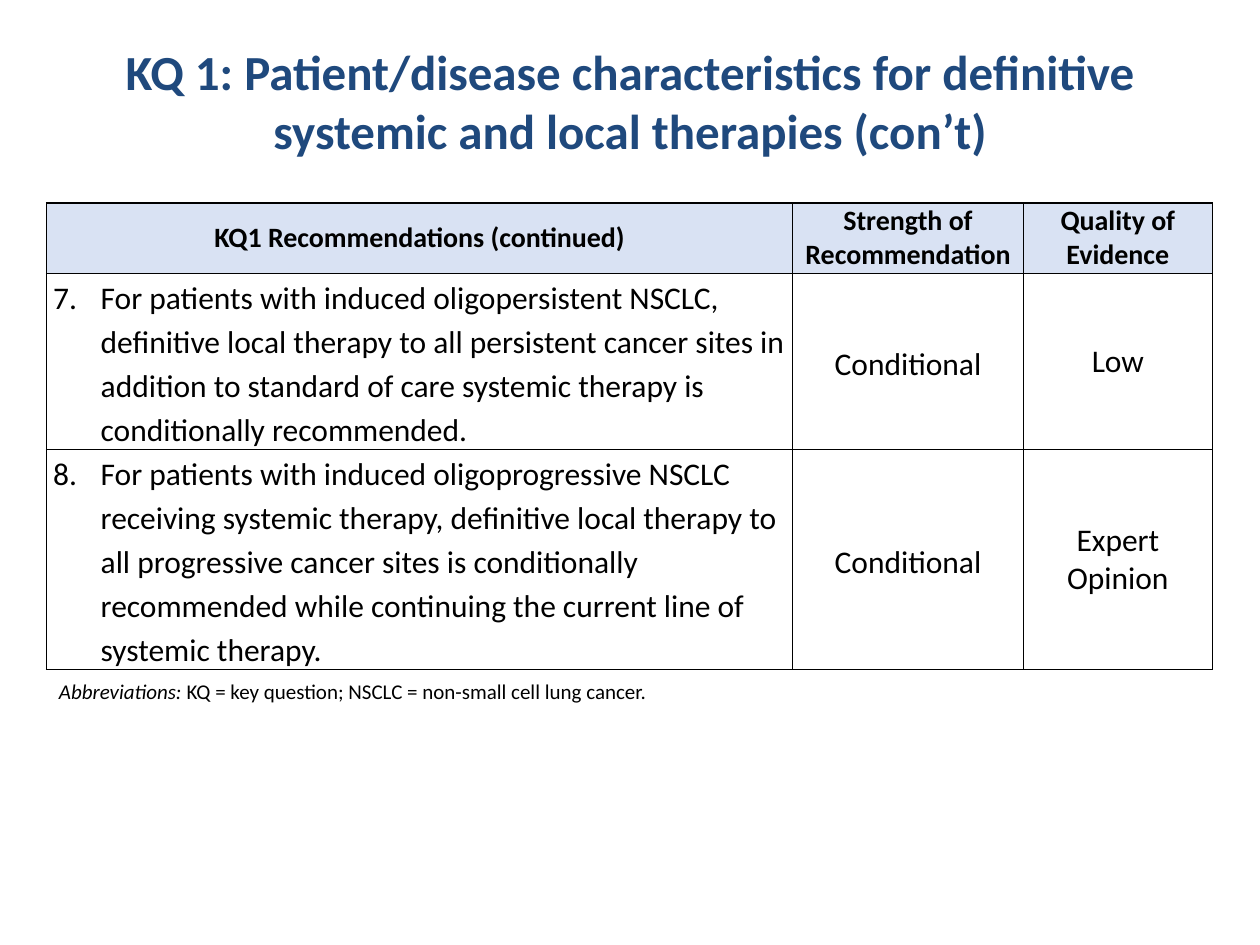
from dataclasses import dataclass

from lxml import etree
from pptx import Presentation
from pptx.dml.color import RGBColor
from pptx.enum.text import MSO_ANCHOR, PP_ALIGN
from pptx.oxml.ns import qn
from pptx.slide import Slide
from pptx.util import Cm, Pt

LEFT, CENTER = PP_ALIGN.LEFT, PP_ALIGN.CENTER
TOP, MIDDLE = MSO_ANCHOR.TOP, MSO_ANCHOR.MIDDLE
COLORS = {"title": "1F497D", "text": "000000", "border": "000000", "header": "D9E2F3"}
HEADERS = ["KQ1 Recommendations (continued)", "Strength of Recommendation", "Quality of Evidence"]
RECOMMENDATIONS = [
    ("For patients with induced oligopersistent NSCLC, definitive local therapy to all "
     "persistent cancer sites in addition to standard of care systemic therapy is "
     "conditionally recommended.", "Conditional", "Low"),
    ("For patients with induced oligoprogressive NSCLC receiving systemic therapy, definitive "
     "local therapy to all progressive cancer sites is conditionally recommended while "
     "continuing the current line of systemic therapy.", "Conditional", "Expert Opinion"),
]
FIRST_NUMBER = 7
COLUMN_WIDTHS = [15.04, 4.65, 3.81]
ROW_HEIGHTS = [1.42, 3.55, 4.44]


@dataclass
class SlideBuilder:
    """Hold the style and the current slide, and add each kind of element."""

    slide: Slide
    font: str = "Calibri"

    def add_run(self, paragraph, text, size, color="text", bold=False, italic=False):
        run = paragraph.add_run()
        run.text = text
        run.font.name = self.font
        run.font.size = Pt(size)
        run.font.bold = bold
        run.font.italic = italic
        run.font.color.rgb = RGBColor.from_string(COLORS[color])

    def add_text(self, left, top, width, height, runs, alignment=LEFT):
        box = self.slide.shapes.add_textbox(Cm(left), Cm(top), Cm(width), Cm(height))
        frame = box.text_frame
        frame.word_wrap = True
        frame.vertical_anchor = TOP
        paragraph = frame.paragraphs[0]
        paragraph.alignment = alignment
        for text, style in runs:
            self.add_run(paragraph, text, **style)

    def add_table(self, left, top, widths, heights):
        shape = self.slide.shapes.add_table(
            len(heights), len(widths), Cm(left), Cm(top), Cm(sum(widths)), Cm(sum(heights)))
        table = shape.table
        table.first_row = False
        table.horz_banding = False
        for column, width in zip(table.columns, widths):
            column.width = Cm(width)
        for row, height in zip(table.rows, heights):
            row.height = Cm(height)
        return table

    def add_borders(self, cell):
        properties = cell._tc.get_or_add_tcPr()
        for side in ("a:lnL", "a:lnR", "a:lnT", "a:lnB"):
            line = etree.SubElement(properties, qn(side), w=str(Pt(1)))
            fill = etree.SubElement(line, qn("a:solidFill"))
            etree.SubElement(fill, qn("a:srgbClr"), val=COLORS["border"])

    def number_paragraph(self, paragraph, number):
        properties = paragraph._p.get_or_add_pPr()
        properties.set("marL", str(Cm(0.96)))
        properties.set("indent", str(-Cm(0.96)))
        etree.SubElement(properties, qn("a:buFont"), typeface="+mj-lt")
        etree.SubElement(properties, qn("a:buAutoNum"), type="arabicPeriod", startAt=str(number))

    def fill_cell(self, cell, text, size=18, bold=False, fill=None, number=None, spacing=None):
        self.add_borders(cell)
        if fill:
            cell.fill.solid()
            cell.fill.fore_color.rgb = RGBColor.from_string(COLORS[fill])
        else:
            cell.fill.background()
        cell.margin_left = cell.margin_right = Cm(0.13)
        cell.margin_top = cell.margin_bottom = 0
        cell.vertical_anchor = TOP if number else MIDDLE
        paragraph = cell.text_frame.paragraphs[0]
        paragraph.alignment = LEFT if number else CENTER
        if number:
            self.number_paragraph(paragraph, number)
        if spacing:
            paragraph.line_spacing = spacing
        self.add_run(paragraph, text, size, bold=bold)


def main():
    presentation = Presentation()
    presentation.slide_width = Cm(25.4)
    presentation.slide_height = Cm(19.05)
    builder = SlideBuilder(presentation.slides.add_slide(presentation.slide_layouts[6]))

    title = "KQ 1: Patient/disease characteristics for definitive systemic and local therapies (con’t)"
    builder.add_text(1.27, 0.71, 22.86, 3.35,
                     [(title, {"size": 28, "color": "title", "bold": True})], CENTER)

    table = builder.add_table(0.94, 4.09, COLUMN_WIDTHS, ROW_HEIGHTS)
    for column, header in enumerate(HEADERS):
        builder.fill_cell(table.cell(0, column), header, size=16, bold=True, fill="header")
    for row, (recommendation, strength, quality) in enumerate(RECOMMENDATIONS, start=1):
        builder.fill_cell(table.cell(row, 0), recommendation,
                          number=FIRST_NUMBER + row - 1, spacing=1.15)
        builder.fill_cell(table.cell(row, 1), strength, spacing=1.15)
        builder.fill_cell(table.cell(row, 2), quality)

    builder.add_text(0.94, 13.56, 20.85, 0.76, [
        ("Abbreviations: ", {"size": 12, "italic": True}),
        ("KQ = key question; NSCLC = non-small cell lung cancer.", {"size": 12}),
    ])
    presentation.save("out.pptx")


if __name__ == "__main__":
    main()
